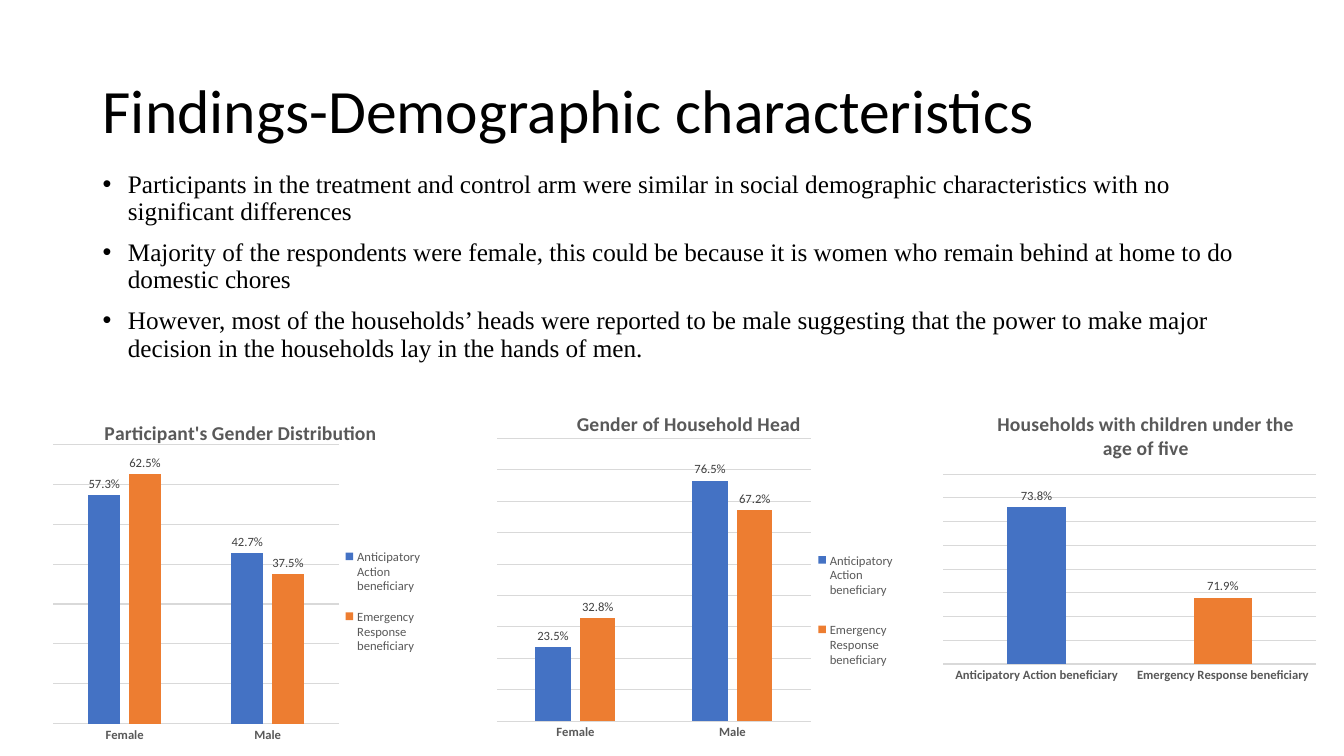
from lxml import etree
from pptx import Presentation
from pptx.chart.data import CategoryChartData
from pptx.dml.color import RGBColor
from pptx.enum.chart import XL_CHART_TYPE, XL_LABEL_POSITION, XL_LEGEND_POSITION, XL_TICK_MARK
from pptx.enum.text import MSO_ANCHOR
from pptx.oxml.ns import qn
from pptx.util import Inches, Pt

BLACK = RGBColor(0x00, 0x00, 0x00)
GREY = RGBColor(0x59, 0x59, 0x59)
DARK = RGBColor(0x40, 0x40, 0x40)
PALE = RGBColor(0xD9, 0xD9, 0xD9)
BLUE = RGBColor(0x44, 0x72, 0xC4)
ORANGE = RGBColor(0xED, 0x7D, 0x31)


def style(font, size, color, bold=False, name="Calibri"):
    font.size = Pt(size)
    font.color.rgb = color
    font.bold = bold
    font.name = name


def place(part, index, spots):
    for old in part.findall(qn("c:layout")):
        part.remove(old)
    layout = etree.Element(qn("c:layout"))
    manual = etree.SubElement(layout, qn("c:manualLayout"))
    if index == 0:
        etree.SubElement(manual, qn("c:layoutTarget")).set("val", "inner")
    for tag in ("xMode", "yMode"):
        etree.SubElement(manual, qn("c:" + tag)).set("val", "edge")
    for tag, spot in zip("xywh", spots):
        etree.SubElement(manual, qn("c:" + tag)).set("val", str(spot))
    part.insert(index, layout)


prs = Presentation()
prs.slide_width = Inches(13.33)
prs.slide_height = Inches(7.5)
slide = prs.slides.add_slide(prs.slide_layouts[6])

title = slide.shapes.add_textbox(Inches(0.92), Inches(0.4), Inches(11.5), Inches(1.45))
frame = title.text_frame
frame.word_wrap = True
frame.vertical_anchor = MSO_ANCHOR.MIDDLE
frame.text = "Findings-Demographic characteristics"
frame.paragraphs[0].line_spacing = 0.9
style(frame.paragraphs[0].font, 44, BLACK)

points = [
    "Participants in the treatment and control arm were similar in social demographic characteristics with no significant differences",
    "Majority of the respondents were female, this could be because it is women who remain behind at home to do domestic chores",
    "However, most of the households’ heads were reported to be male suggesting that the power to make major decision in the households lay in the hands of men.",
]
body = slide.shapes.add_textbox(Inches(0.92), Inches(1.65), Inches(11.89), Inches(1.67))
frame = body.text_frame
frame.word_wrap = True
frame.text = "\n".join(points)
for para in frame.paragraphs:
    para.line_spacing = 0.9
    para.space_before = Pt(10)
    style(para.font, 18, BLACK, name="Times New Roman")
    props = para._p.get_or_add_pPr()
    props.set("marL", str(Inches(0.25)))
    props.set("indent", str(-Inches(0.25)))
    bullet = etree.Element(qn("a:buFont"))
    bullet.set("typeface", "Arial")
    mark = etree.Element(qn("a:buChar"))
    mark.set("char", "•")
    spot = props.index(props.find(qn("a:defRPr")))
    props.insert(spot, bullet)
    props.insert(spot + 1, mark)

arms = ["Anticipatory Action beneficiary", "Emergency Response beneficiary"]
sexes = ["Female", "Male"]
charts = [
    dict(head="Participant's Gender Distribution", box=(0.37, 3.95, 3.94, 3.55),
         cats=sexes, rows=list(zip(arms, [(0.573, 0.427), (0.625, 0.375)])),
         scale=(0, 0.7, 0.1), top=(0.16, 0.05), plot=(0.04, 0.13, 0.72, 0.78),
         key=(0.76, 0.38, 0.22, 0.38)),
    dict(head="Gender of Household Head", box=(4.76, 3.89, 4.21, 3.55),
         cats=sexes, rows=list(zip(arms, [(0.235, 0.765), (0.328, 0.672)])),
         scale=(0, 0.9, 0.1), top=(0.22, 0.04), plot=(0.04, 0.13, 0.74, 0.79),
         key=(0.78, 0.38, 0.21, 0.46)),
    dict(head="Households with children under the age of five", box=(9.28, 3.95, 3.85, 2.9),
         cats=arms, rows=[("Series 1", (0.738, 0.719))],
         scale=(0.705, 0.745, 0.005), top=(0.15, 0.03), plot=(0.02, 0.26, 0.96, 0.65),
         key=None),
]

for item in charts:
    data = CategoryChartData(number_format="0.0%")
    data.categories = item["cats"]
    for name, vals in item["rows"]:
        data.add_series(name, vals)
    box = [Inches(side) for side in item["box"]]
    chart = slide.shapes.add_chart(XL_CHART_TYPE.COLUMN_CLUSTERED, *box, data).chart
    style(chart.font, 10, BLACK)

    chart.has_title = True
    heading = chart.chart_title
    heading.text_frame.text = item["head"]
    style(heading.text_frame.paragraphs[0].font, 14, GREY, True)
    place(heading._element, 1, item["top"])

    axis = chart.category_axis
    axis.major_tick_mark = XL_TICK_MARK.NONE
    axis.format.line.color.rgb = PALE
    axis.format.line.width = Pt(0.75)
    style(axis.tick_labels.font, 9, GREY, True)

    scale = chart.value_axis
    scale.minimum_scale, scale.maximum_scale, scale.major_unit = item["scale"]
    scale.visible = False
    scale.has_major_gridlines = True
    scale.major_gridlines.format.line.color.rgb = PALE
    scale.major_gridlines.format.line.width = Pt(0.75)

    plot = chart.plots[0]
    plot.gap_width = 219
    plot.overlap = -27
    plot.vary_by_categories = False
    place(chart._chartSpace.chart.plotArea, 0, item["plot"])

    for series, color in zip(plot.series, (BLUE, ORANGE)):
        series.format.fill.solid()
        series.format.fill.fore_color.rgb = color
        labels = series.data_labels
        labels.show_value = True
        labels.position = XL_LABEL_POSITION.OUTSIDE_END
        labels.number_format = "0.0%"
        labels.number_format_is_linked = False
        style(labels.font, 9, DARK)

    chart.has_legend = item["key"] is not None
    if chart.has_legend:
        legend = chart.legend
        legend.position = XL_LEGEND_POSITION.RIGHT
        legend.include_in_layout = False
        style(legend.font, 9, GREY)
        place(legend._element, 1, item["key"])
    else:
        fill = plot.series[0].points[1].format.fill
        fill.solid()
        fill.fore_color.rgb = ORANGE

prs.save("out.pptx")
